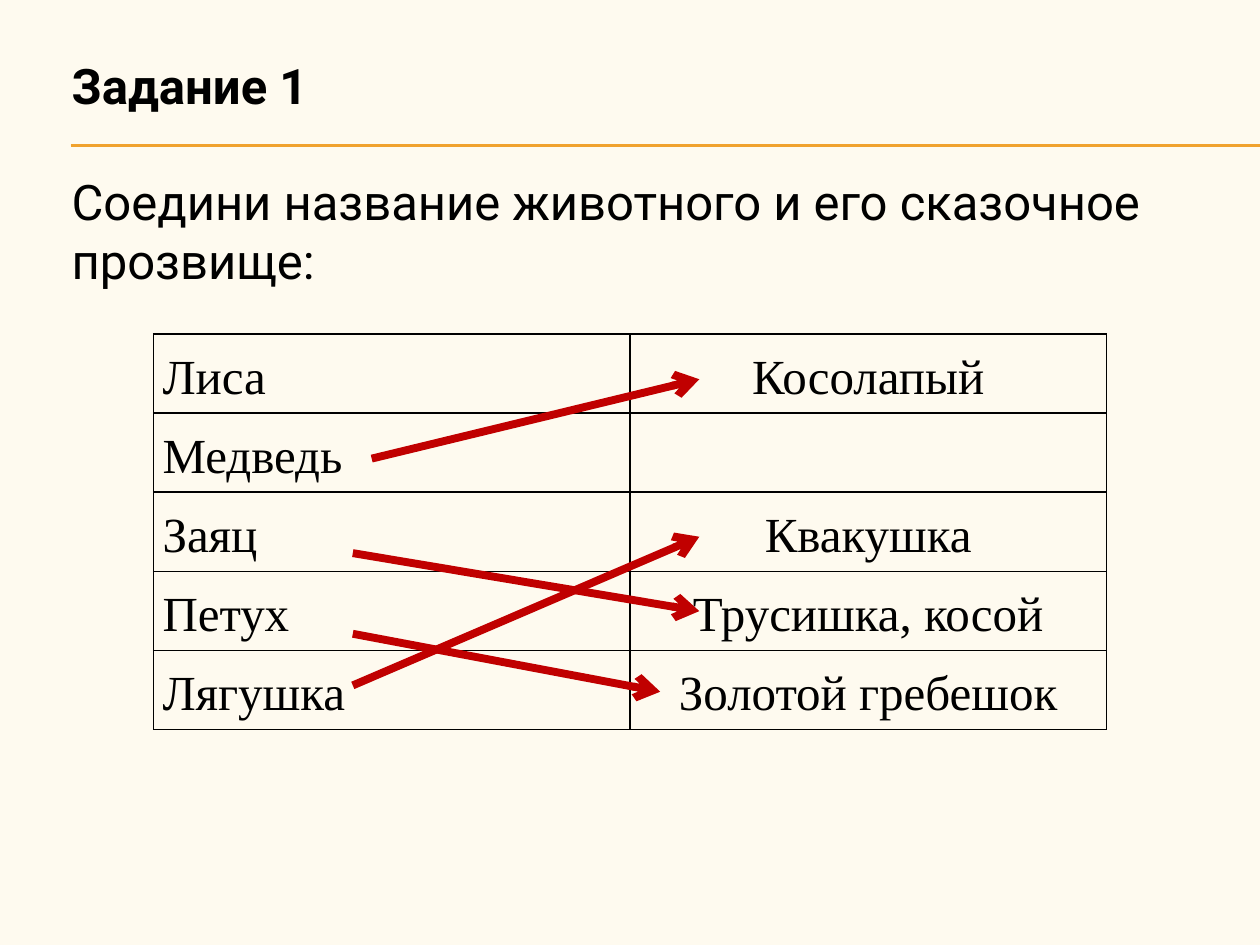
import pptx
import pptx.dml.color
import pptx.enum.shapes
import pptx.enum.text
import pptx.oxml.ns
import pptx.util
from lxml import etree
from pptx.util import Inches

BACKGROUND, RULE, INK, ANSWER = "FEFAEF", "F0A22E", "000000", "C00000"
LEFT, CENTER = pptx.enum.text.PP_ALIGN.LEFT, pptx.enum.text.PP_ALIGN.CENTER
ANIMALS = [
    ("Лиса", "Косолапый"),
    ("Медведь", ""),
    ("Заяц", "Квакушка"),
    ("Петух", "Трусишка, косой"),
    ("Лягушка", "Золотой гребешок"),
]
MATCHES = [
    ((2.95, 3.64), (5.55, 3.01)),
    ((2.8, 4.39), (5.55, 4.85)),
    ((2.8, 5.03), (5.24, 5.49)),
    ((2.8, 5.44), (5.55, 4.26)),
]


def color(value):
    """Return the colour for a hex string."""
    return pptx.dml.color.RGBColor.from_string(value)


def add_child(parent, tag, **attributes):
    """Append a DrawingML element and return it."""
    return etree.SubElement(parent, pptx.oxml.ns.qn(tag), **attributes)


def write(paragraph, text, font="Roboto", size=28, bold=False, align=LEFT, spacing=None, before=0):
    """Write formatted text into a paragraph."""
    paragraph.alignment = align
    paragraph.line_spacing = spacing
    paragraph.space_before = pptx.util.Pt(before)
    run = paragraph.add_run()
    run.text = text
    run.font.name = font
    run.font.size = pptx.util.Pt(size)
    run.font.bold = bold
    run.font.color.rgb = color(INK)


def add_line(slide, start, end, stroke, width, arrow=False):
    """Draw a straight line, with an open arrowhead if asked."""
    line = slide.shapes.add_connector(
        pptx.enum.shapes.MSO_CONNECTOR.STRAIGHT, *map(Inches, start + end))
    line.line.color.rgb = color(stroke)
    line.line.width = pptx.util.Pt(width)
    if arrow:
        add_child(line.line._get_or_add_ln(), "a:tailEnd", type="arrow")
    add_child(line._element.spPr, "a:effectLst")


def add_task(slide):
    """Add the heading and the instruction below it."""
    box = slide.shapes.add_textbox(Inches(0.47), Inches(0.39), Inches(10), Inches(1.51))
    frame = box.text_frame
    frame.word_wrap = True
    write(frame.paragraphs[0], "Задание 1", bold=True)
    write(frame.add_paragraph(), "Соедини название животного и его сказочное прозвище:", before=33)


def style_cell(cell):
    """Give a cell thin black borders, no fill and narrow margins."""
    properties = cell._tc.get_or_add_tcPr()
    for side in ("a:lnL", "a:lnR", "a:lnT", "a:lnB"):
        border = add_child(properties, side, w=str(pptx.util.Pt(1)))
        add_child(add_child(border, "a:solidFill"), "a:srgbClr", val=INK)
    cell.fill.background()
    cell.margin_left = cell.margin_right = Inches(0.07)
    cell.margin_top = cell.margin_bottom = 0
    cell.vertical_anchor = pptx.enum.text.MSO_ANCHOR.MIDDLE


def add_animals(slide):
    """Add the table of animals and nicknames."""
    table = slide.shapes.add_table(
        len(ANIMALS), 2, Inches(1.22), Inches(2.65), Inches(7.56), Inches(3.14)).table
    table.first_row = table.horz_banding = False
    for row, names in enumerate(ANIMALS):
        for column, (name, align) in enumerate(zip(names, (LEFT, CENTER))):
            cell = table.cell(row, column)
            style_cell(cell)
            if name:
                write(cell.text_frame.paragraphs[0], name, font="Times New Roman",
                      align=align, spacing=1.15)


def main():
    """Build and save the slide."""
    deck = pptx.Presentation()
    deck.slide_width, deck.slide_height = Inches(10), Inches(7.5)
    slide = deck.slides.add_slide(deck.slide_layouts[6])
    slide.background.fill.solid()
    slide.background.fill.fore_color.rgb = color(BACKGROUND)
    for height in (1.15, 1.16):
        add_line(slide, (0.56, height), (10, height), RULE, 0.75)
    add_task(slide)
    add_animals(slide)
    for animal, nickname in MATCHES:
        add_line(slide, animal, nickname, ANSWER, 4.5, arrow=True)
    deck.save("out.pptx")


if __name__ == "__main__":
    main()
